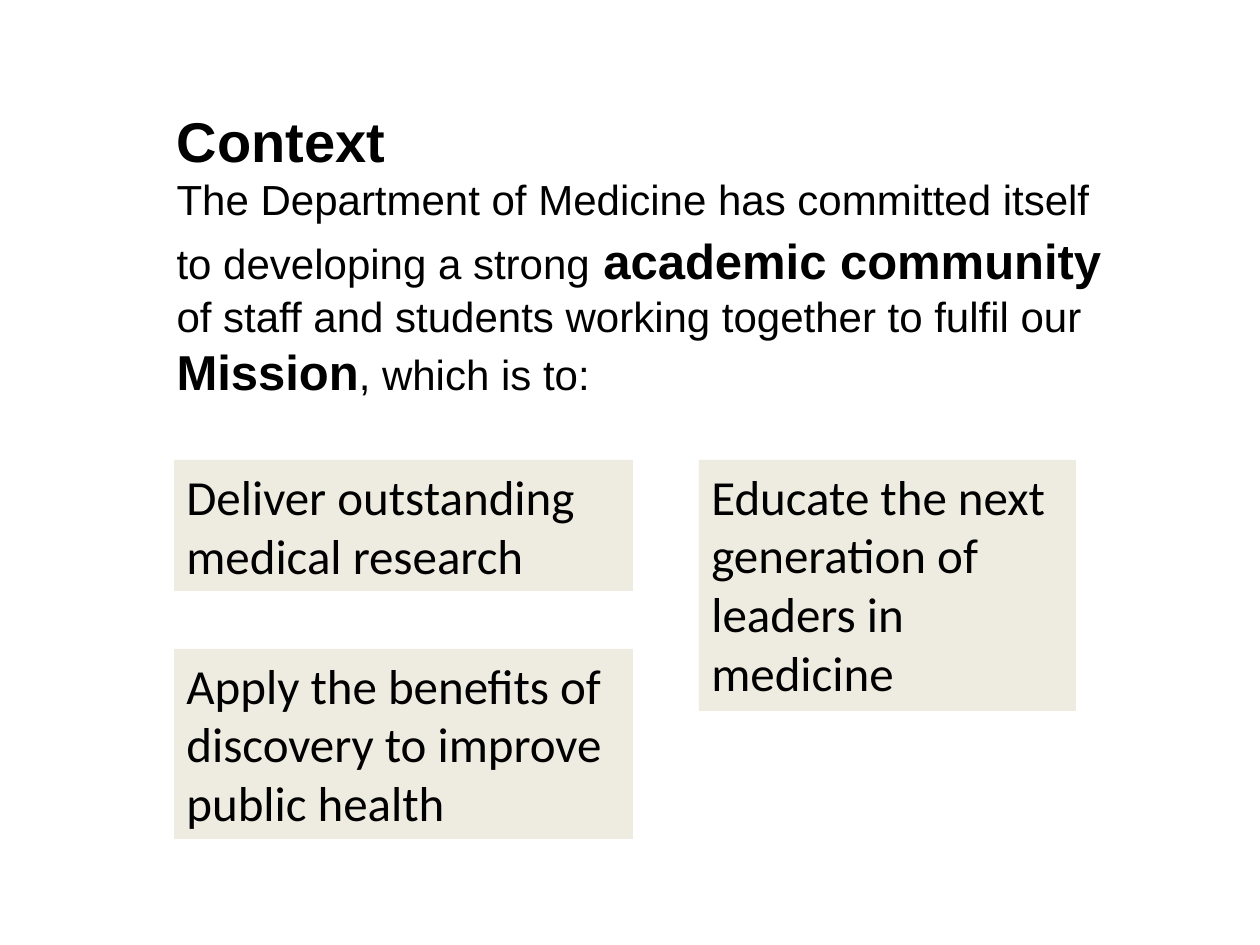
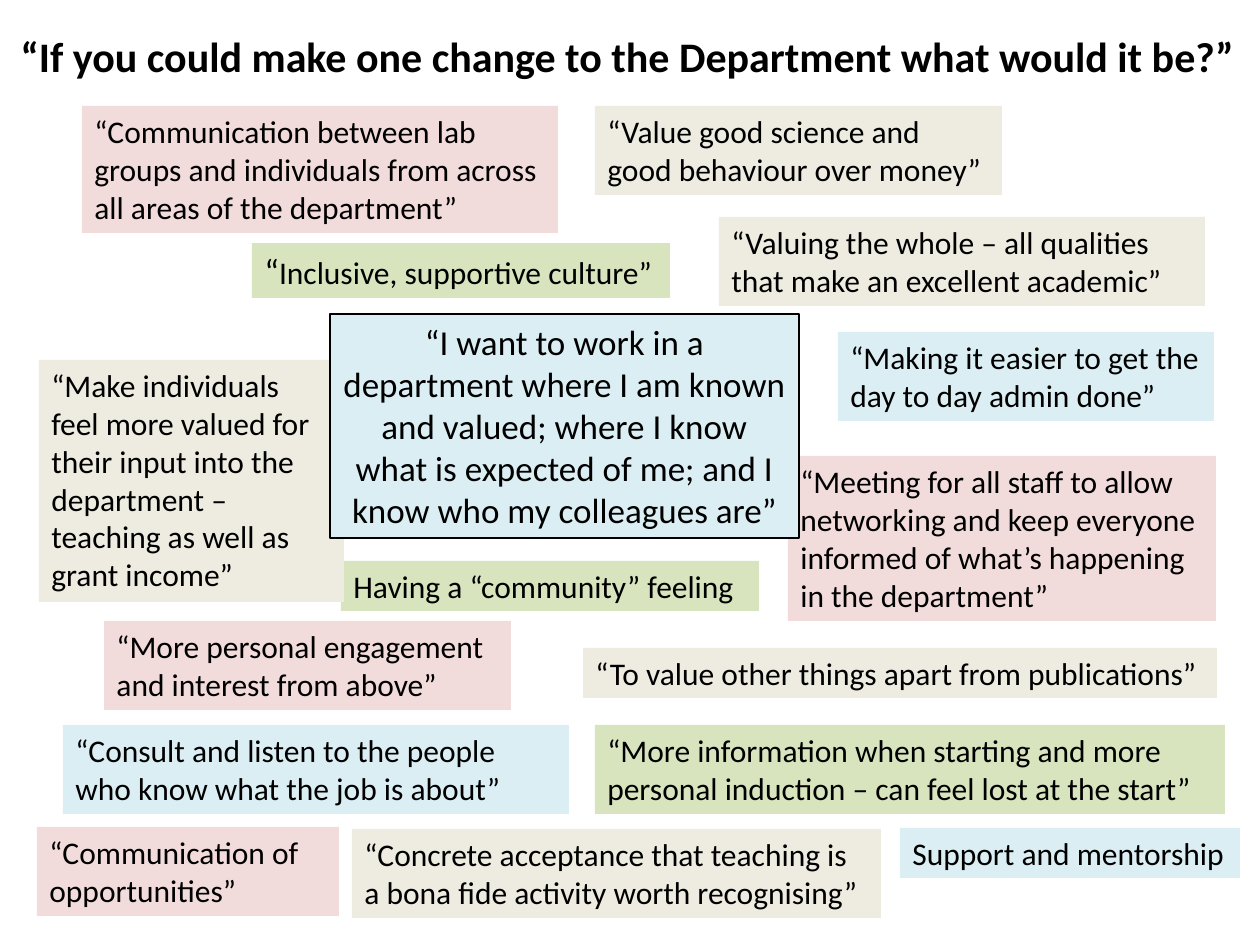
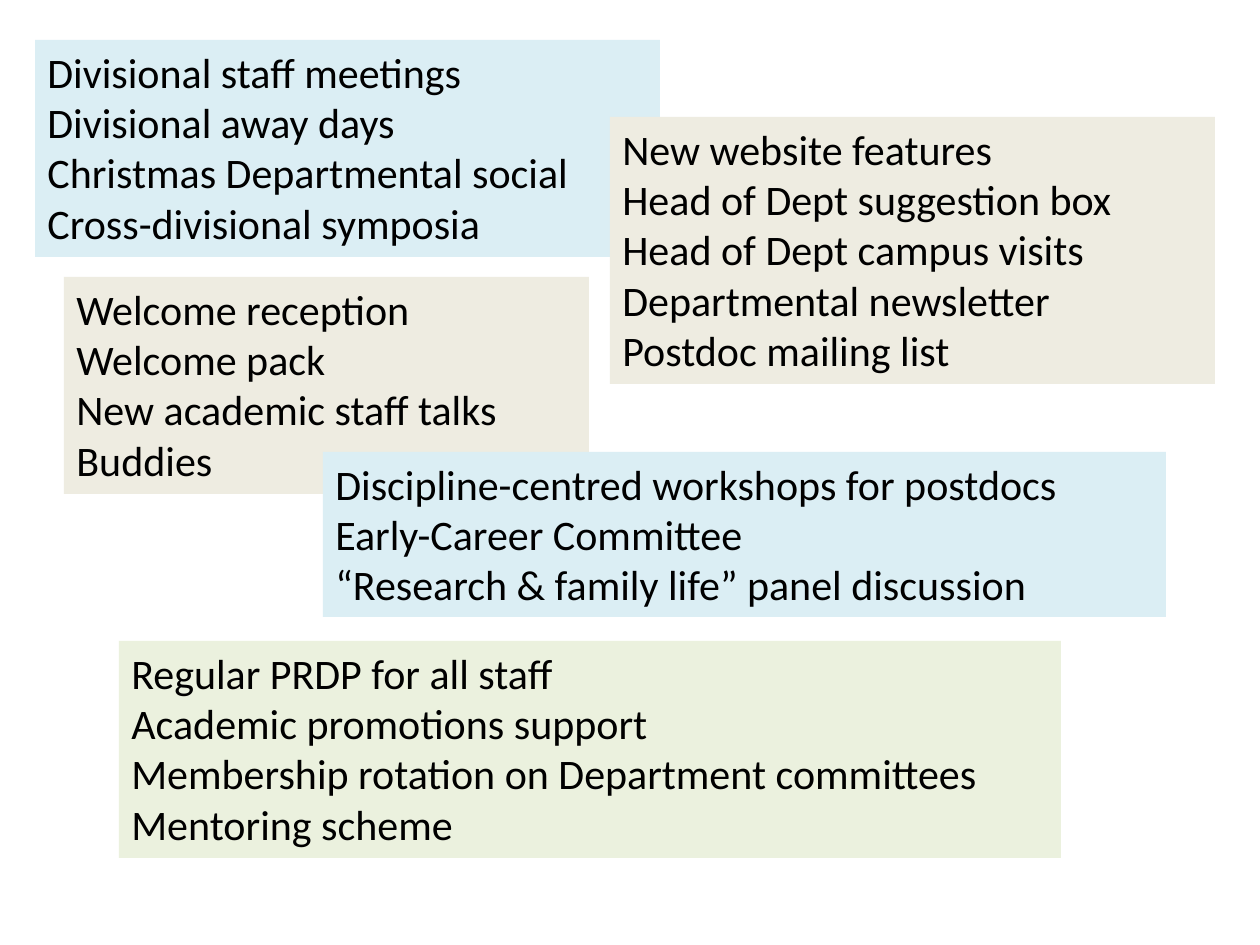
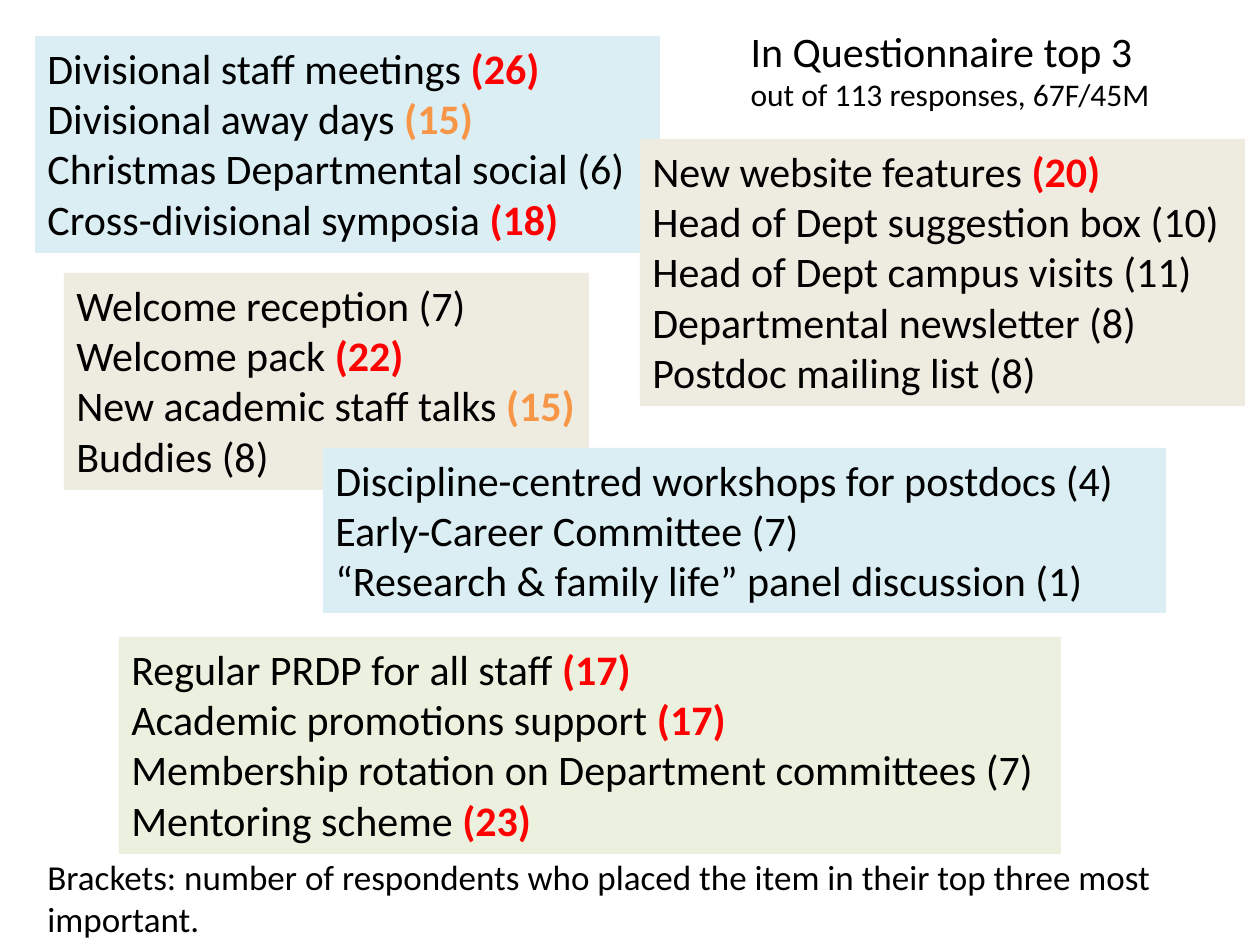
from pptx import Presentation
from pptx.dml.color import RGBColor
from pptx.enum.text import MSO_ANCHOR, MSO_AUTO_SIZE, PP_ALIGN
from pptx.util import Emu, Pt

PX_PER_INCH = 126
BLACK = RGBColor(0x00, 0x00, 0x00)
RED = RGBColor(0xFF, 0x00, 0x00)
ORANGE = RGBColor(0xF7, 0x96, 0x46)
SAND = RGBColor(0xEE, 0xEC, 0xE1)
ROSE = RGBColor(0xF2, 0xDC, 0xDB)
GREEN = RGBColor(0xD7, 0xE4, 0xBD)
PALE_GREEN = RGBColor(0xEB, 0xF1, 0xDE)
SKY = RGBColor(0xDB, 0xEE, 0xF4)
TITLE_ONLY, BLANK = 5, 6
ONE_LINE = 55

QUOTES = [
    ((788, 456, 428, 165), ROSE, "“Meeting for all staff to allow networking and keep everyone "
                                 "informed of what’s happening in the department”"),
    ((82, 106, 476, 127), ROSE, "“Communication between lab groups and individuals from across "
                                "all areas of the department”"),
    ((719, 217, 486, 89), SAND, "“Valuing the whole – all qualities that make an excellent academic”"),
    ((595, 106, 407, 89), SAND, "“Value good science and good behaviour over money”"),
    ((252, 243, 418, 55), GREEN, [("“", {"size": 20}), ("Inclusive, supportive culture”", {})]),
    ((595, 725, 630, 89), GREEN, "“More information when starting and more personal induction – "
                                 "can feel lost at the start”"),
    ((104, 621, 407, 89), ROSE, "“More personal engagement and interest from above”"),
    ((63, 725, 506, 89), SKY, "“Consult and listen to the people who know what the job is about”"),
    ((341, 561, 418, 50), GREEN, "Having a “community” feeling"),
    ((583, 648, 634, 50), SAND, "“To value other things apart from publications”"),
    ((37, 827, 302, 89), ROSE, "“Communication of opportunities”"),
    ((39, 360, 305, 242), SAND, "“Make individuals feel more valued for their input into the "
                                "department – teaching as well as grant income”"),
    ((352, 829, 529, 89), SAND, "“Concrete acceptance that teaching is a bona fide activity "
                                "worth recognising”"),
    ((900, 828, 340, 50), SKY, "Support and mentorship"),
    ((838, 332, 376, 89), SKY, "“Making it easier to get the day to day admin done”"),
]
WISH = ("“I want to work in a department where I am known and valued; where I know "
        "what is expected of me; and I know who my colleagues are”")

MEETINGS = [("Divisional staff meetings", 26), ("Divisional away days", 15),
            ("Christmas Departmental social", 6), ("Cross-divisional symposia", 18)]
COMMUNICATION = [("New website features", 20), ("Head of Dept suggestion box", 10),
                 ("Head of Dept campus visits", 11), ("Departmental newsletter", 8),
                 ("Postdoc mailing list", 8)]
WELCOME = [("Welcome reception", 7), ("Welcome pack", 22),
           ("New academic staff talks", 15), ("Buddies", 8)]
CAREER = [("Regular PRDP for all staff", 17), ("Academic promotions support", 17),
          ("Membership rotation on Department committees", 7), ("Mentoring scheme", 23)]
POSTDOCS = [("Discipline-centred workshops for postdocs", 4), ("Early-Career Committee", 7),
            ("“Research & family life” panel discussion", 1)]


def px(length):
    return Emu(round(length * 914400 / PX_PER_INCH))


def shift(box, origin):
    return box[0] + origin[0], box[1] + origin[1], box[2], box[3]


def write(holder, paragraphs, align=PP_ALIGN.LEFT, anchor=MSO_ANCHOR.TOP, wrap=True,
          fit=MSO_AUTO_SIZE.SHAPE_TO_FIT_TEXT, **base):
    frame = holder.text_frame
    frame.word_wrap = wrap
    frame.auto_size = fit
    frame.vertical_anchor = anchor
    for index, content in enumerate(paragraphs):
        paragraph = frame.add_paragraph() if index else frame.paragraphs[0]
        paragraph.alignment = align
        for words, own in [(content, {})] if isinstance(content, str) else content:
            style = {"size": 18, "font": "Calibri", "color": BLACK, "bold": False} | base | own
            run = paragraph.add_run()
            run.text = words
            run.font.size = Pt(style["size"])
            run.font.name = style["font"]
            run.font.bold = style["bold"]
            run.font.color.rgb = style["color"]


def add_title(slide, box, paragraphs, margin_top=6, **style):
    title = slide.shapes.title
    title.left, title.top, title.width, title.height = map(px, box)
    write(title, paragraphs, fit=MSO_AUTO_SIZE.NONE, **style)
    title.text_frame.margin_top = px(margin_top)


def add_note(slide, box, paragraphs, fill=None, outline=None, **style):
    note = slide.shapes.add_textbox(*map(px, box))
    if fill is not None:
        note.fill.solid()
        note.fill.fore_color.rgb = fill
    if outline is not None:
        note.line.color.rgb = outline
        note.line.width = Pt(0.75)
    write(note, paragraphs, **style)


def add_missions(slide, origin):
    for box, mission in (
        ((0, 0, 459, 131), "Deliver outstanding medical research"),
        ((525, 0, 377, 251), "Educate the next generation of leaders in medicine"),
        ((0, 189, 459, 190), "Apply the benefits of discovery to improve public health"),
    ):
        add_note(slide, shift(box, origin), [mission], fill=SAND, size=28)


def add_quotes(slide):
    for box, fill, quote in QUOTES:
        add_note(slide, box, [quote], fill=fill, wrap=box[3] > ONE_LINE)
    add_note(slide, (330, 314, 469, 224), [WISH], fill=SKY, outline=BLACK,
             size=20, align=PP_ALIGN.CENTER)


def rated(item, votes):
    if votes < 15:
        return f"{item} ({votes})"
    color = RED if votes > 15 else ORANGE
    return [(f"{item} ", {}), (f"({votes})", {"color": color, "bold": True})]


def add_activities(slide, origin, communication_at, show_votes):
    for box, fill, items in (
        ((0, 0, 625, 217), SKY, MEETINGS),
        ((*communication_at, 605, 267), SAND, COMMUNICATION),
        ((29, 237, 525, 217), SAND, WELCOME),
        ((84, 601, 942, 217), PALE_GREEN, CAREER),
        ((288, 412, 843, 165), SKY, POSTDOCS),
    ):
        lines = [rated(item, votes) if show_votes else item for item, votes in items]
        add_note(slide, shift(box, origin), lines, fill=fill, size=24)


def build_context(slide):
    strong = {"size": 28, "bold": True}
    add_title(slide, (164, 87, 953, 369), [
        [("Context", {"size": 32, "bold": True})],
        [("The Department of Medicine has committed itself to developing a strong", {}),
         (" academic community", strong),
         (" ", {"size": 32, "bold": True}),
         ("of staff and students working together to fulfil our ", {}),
         ("Mission", strong),
         (", which is to:", {})],
    ], margin_top=19, size=24, font="Arial")
    add_missions(slide, (174, 460))


def build_survey(slide):
    add_title(slide, (5, 24, 1245, 63),
              ["“If you could make one change to the Department what would it be?”"],
              size=24, bold=True, align=PP_ALIGN.CENTER)
    add_quotes(slide)


def build_activities(slide):
    add_activities(slide, (35, 40), (575, 77), show_votes=False)


def build_ratings(slide):
    add_title(slide, (738, 19, 466, 102),
              [[("In Questionnaire top 3", {"size": 24})], "out of 113 responses, 67F/45M"])
    add_activities(slide, (35, 36), (605, 103), show_votes=True)
    add_note(slide, (35, 849, 1211, 97),
             ["Brackets: number of respondents who placed the item in their top three "
              "most important."], size=20)


def main():
    deck = Presentation()
    deck.slide_width, deck.slide_height = px(1260), px(945)
    for layout, build in ((TITLE_ONLY, build_context), (TITLE_ONLY, build_survey),
                          (BLANK, build_activities), (TITLE_ONLY, build_ratings)):
        build(deck.slides.add_slide(deck.slide_layouts[layout]))
    deck.save("out.pptx")


if __name__ == "__main__":
    main()
